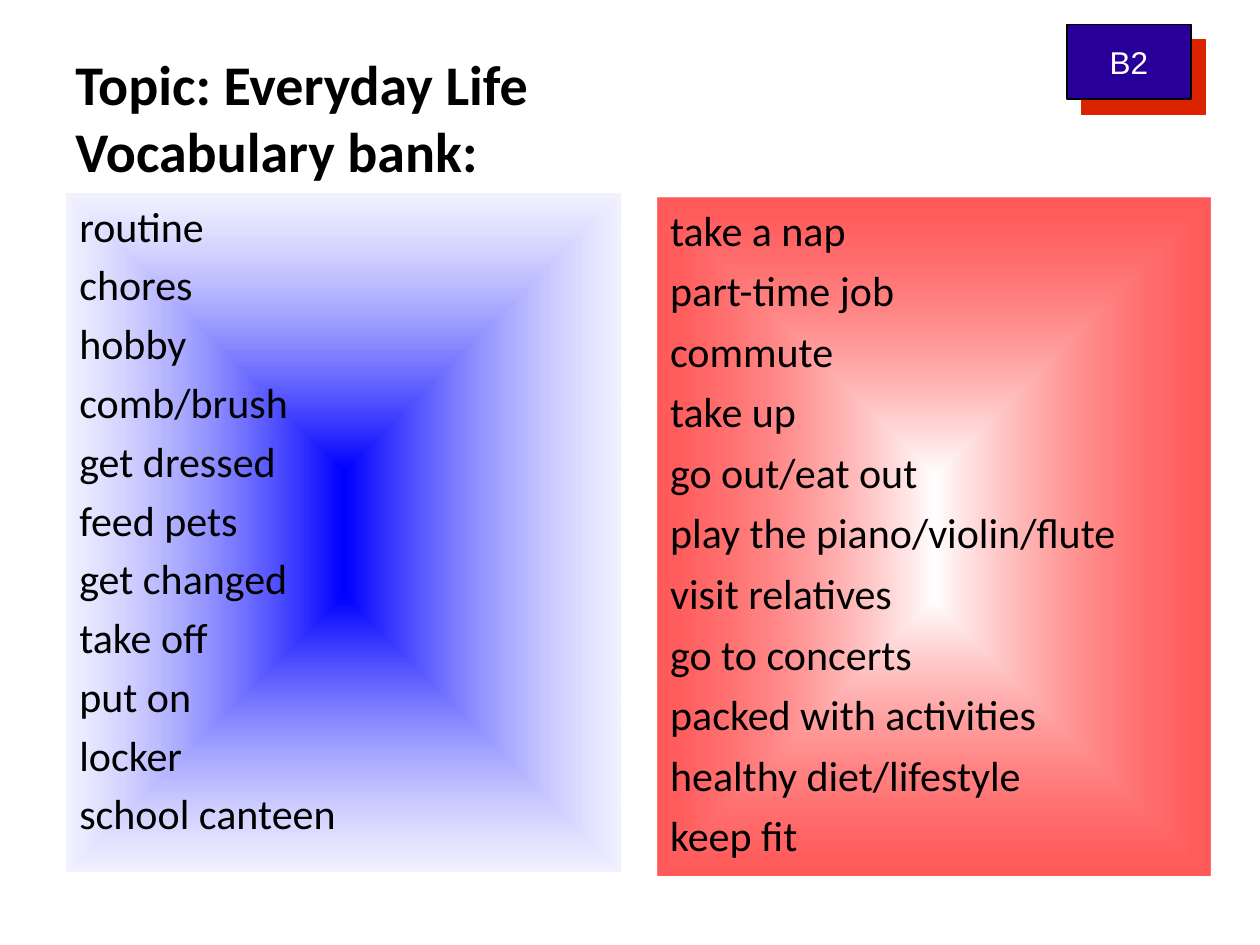
import dataclasses

import lxml.etree
import pptx
import pptx.dml.color
import pptx.enum.shapes
import pptx.enum.text
import pptx.oxml.ns
import pptx.util


@dataclasses.dataclass(frozen=True)
class Theme:
    black: str = "000000"
    white: str = "FFFFFF"
    blue: str = "0000FF"
    pale_blue: str = "E6E6FF"
    red: str = "FF0000"
    badge: str = "280099"
    badge_shadow: str = "DC2300"
    font: str = "Calibri"
    badge_font: str = "Arial"
    title_size: int = 32
    word_size: int = 24
    badge_size: int = 18


theme = Theme()
qn = pptx.oxml.ns.qn
Cm = pptx.util.Cm
Pt = pptx.util.Pt
RGBColor = pptx.dml.color.RGBColor
rectangle = pptx.enum.shapes.MSO_SHAPE.RECTANGLE
anchor = pptx.enum.text.MSO_ANCHOR
align = pptx.enum.text.PP_ALIGN


def add_run(paragraph, text, font, size, color, bold=False):
    run = paragraph.add_run()
    run.text = text
    run.font.name = font
    run.font.size = Pt(size)
    run.font.bold = bold
    run.font.color.rgb = RGBColor.from_string(color)


def add_element(parent, tag, **attributes):
    element = lxml.etree.SubElement(parent, qn(tag))
    for name, value in attributes.items():
        element.set(name, str(value))
    return element


presentation = pptx.Presentation()
presentation.slide_width = Cm(25.4)
presentation.slide_height = Cm(19.05)
slide = presentation.slides.add_slide(presentation.slide_layouts[6])

title = slide.shapes.add_textbox(Cm(1.27), Cm(0.64), Cm(22.86), Cm(3.43))
title.text_frame.word_wrap = True
title.text_frame.vertical_anchor = anchor.MIDDLE
paragraph = title.text_frame.paragraphs[0]
add_run(paragraph, "Topic: Everyday Life", theme.font, theme.title_size, theme.black, True)
paragraph.add_line_break()
add_run(paragraph, "Vocabulary bank:", theme.font, theme.title_size, theme.black, True)

daily_words = [
    "routine", "chores", "hobby", "comb/brush", "get dressed", "feed pets",
    "get changed", "take off", "put on", "locker", "school canteen",
]
leisure_words = [
    "take a nap", "part-time job", "commute", "take up", "go out/eat out",
    "play the piano/violin/flute", "visit relatives", "go to concerts",
    "packed with activities", "healthy diet/lifestyle", "keep fit",
]
panels = [
    (1.35, 3.91, theme.blue, theme.pale_blue, 50, 4.8, daily_words),
    (13.26, 3.99, theme.white, theme.red, 65, 5.8, leisure_words),
]
for left, top, center_color, edge_color, edge_opacity, gap, words in panels:
    panel = slide.shapes.add_shape(rectangle, Cm(left), Cm(top), Cm(11.15), Cm(13.67))
    panel.shadow.inherit = False
    panel.line.fill.background()
    panel.fill.gradient()
    gradient = panel.element.spPr.find(qn("a:gradFill"))
    for child in list(gradient):
        gradient.remove(child)
    stops = add_element(gradient, "a:gsLst")
    center_stop = add_element(stops, "a:gs", pos=0)
    add_element(center_stop, "a:srgbClr", val=center_color)
    edge_stop = add_element(stops, "a:gs", pos=100000)
    edge = add_element(edge_stop, "a:srgbClr", val=edge_color)
    add_element(edge, "a:alpha", val=edge_opacity * 1000)
    path_fill = add_element(gradient, "a:path", path="shape")
    add_element(path_fill, "a:fillToRect", l=50000, t=50000, r=50000, b=50000)

    frame = panel.text_frame
    frame.word_wrap = True
    frame.vertical_anchor = anchor.TOP
    for index, word in enumerate(words):
        paragraph = frame.add_paragraph() if index else frame.paragraphs[0]
        paragraph.alignment = align.LEFT
        paragraph.space_before = Pt(gap if index else 0)
        add_run(paragraph, word, theme.font, theme.word_size, theme.black)

badge = slide.shapes.add_shape(rectangle, Cm(21.51), Cm(0.5), Cm(2.5), Cm(1.5))
badge.fill.solid()
badge.fill.fore_color.rgb = RGBColor.from_string(theme.badge)
badge.line.color.rgb = RGBColor.from_string(theme.black)
badge.line.width = Pt(0.75)
badge.shadow.inherit = False
effects = badge.element.spPr.find(qn("a:effectLst"))
shadow = add_element(effects, "a:outerShdw", dist=Pt(12), dir=45 * 60000, algn="ctr", rotWithShape=0)
add_element(shadow, "a:srgbClr", val=theme.badge_shadow)
badge.text_frame.word_wrap = False
badge.text_frame.vertical_anchor = anchor.MIDDLE
paragraph = badge.text_frame.paragraphs[0]
paragraph.alignment = align.CENTER
add_run(paragraph, "B2", theme.badge_font, theme.badge_size, theme.white)

presentation.save("out.pptx")
